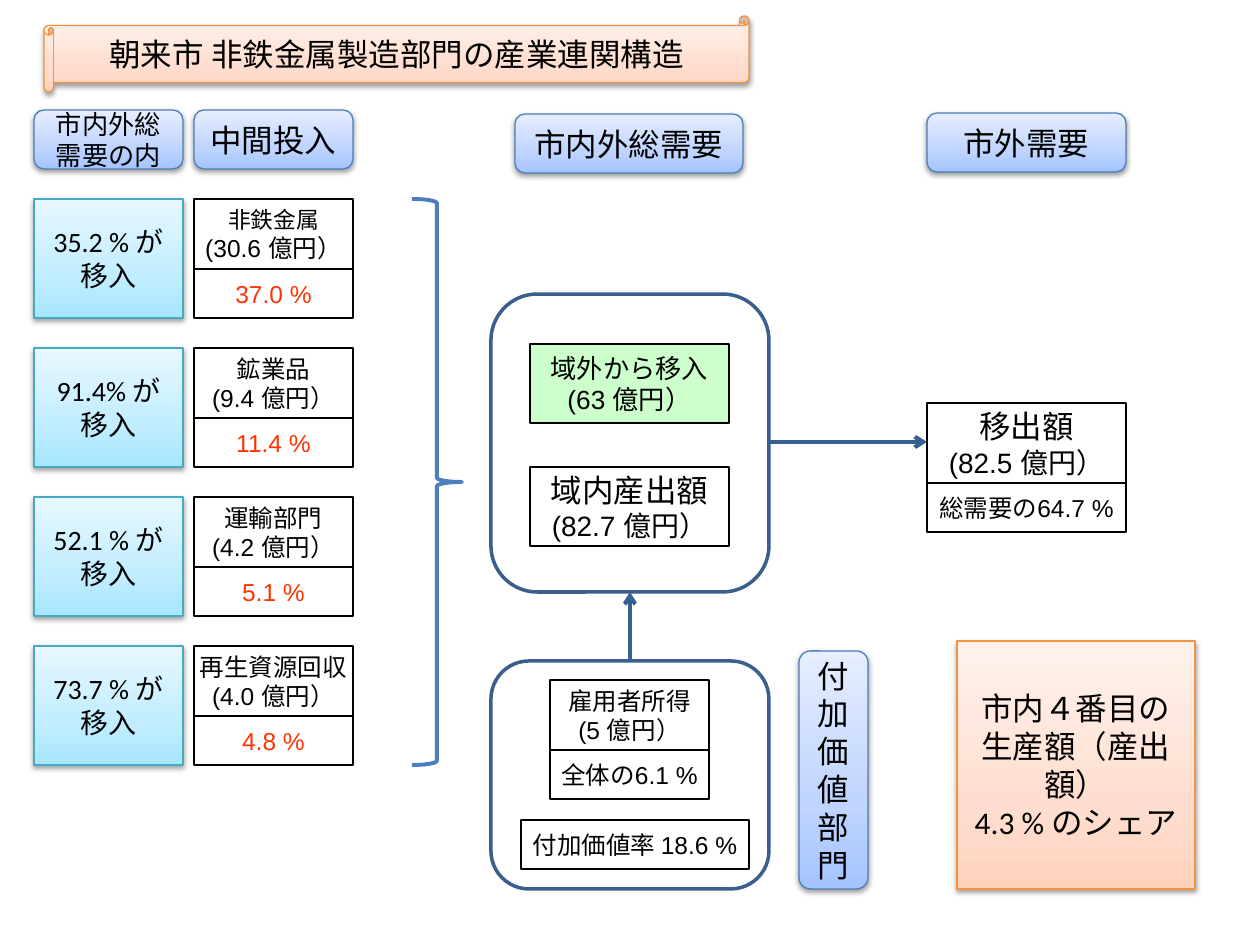
from copy import deepcopy

from lxml import etree
from pptx import Presentation
from pptx import util as u
from pptx.dml.color import RGBColor
from pptx.enum import shapes, text
from pptx.oxml import ns

PX = 914400 // 126  # EMU in one px
SHAPE = shapes.MSO_SHAPE

BLACK = RGBColor(0x00, 0x00, 0x00)
RED = RGBColor(0xFF, 0x33, 0x00)
GREEN = RGBColor(0xCC, 0xFF, 0xCC)
FRAME = RGBColor(0x3A, 0x5F, 0x8C)
ARROW = RGBColor(0x37, 0x60, 0x92)
BLUE_LINE = RGBColor(0x4B, 0x7E, 0xBC)
AQUA_LINE = RGBColor(0x46, 0xAA, 0xC5)
ORANGE_LINE = RGBColor(0xF6, 0x92, 0x40)

# Line colour, then gradient colours from bottom to top
BLUE = (BLUE_LINE, (RGBColor(0xA4, 0xC4, 0xFF), RGBColor(0xBF, 0xD4, 0xFF),
                    RGBColor(0xE6, 0xEE, 0xFF)))
AQUA = (AQUA_LINE, (RGBColor(0xA7, 0xE6, 0xFF), RGBColor(0xC1, 0xED, 0xFF),
                    RGBColor(0xE7, 0xF8, 0xFF)))
ORANGE = (ORANGE_LINE, (RGBColor(0xFF, 0xD2, 0xBD), RGBColor(0xFF, 0xDE, 0xD0),
                        RGBColor(0xFF, 0xF2, 0xED)))

TITLE = "朝来市 非鉄金属製造部門の産業連関構造"
ROW_TOP, ROW_PITCH = 199, 149
NAME_H, SHARE_H = 70, 49
INPUTS = [  # import lines, sector, sector size, amount, share
    (["35.2 % が", "移入"], "非鉄金属", 13, "(30.6 億円）", "37.0 %"),
    (["91.4% が移入"], "鉱業品", 14, "(9.4 億円）", "11.4 %"),
    (["52.1 % が", "移入"], "運輸部門", 14, "(4.2 億円）", "5.1 %"),
    (["73.7 % が", "移入"], "再生資源回収", 14, "(4.0 億円）", "4.8 %"),
]
HEADERS = [  # box, text, size
    ((34, 110, 149, 59), "市内外総需要の内", 15),
    ((194, 110, 159, 59), "中間投入", 18),
    ((515, 114, 228, 59), "市内外総需要", 18),
    ((927, 113, 199, 59), "市外需要", 18),
    ((799, 651, 69, 238), "付加価値部門", 18),
]


def px(*values):
    return [v * PX for v in values]


def write(s, lines, font, color=BLACK, wrap=True):
    """Fill a shape with centred lines, each a (text, size) pair."""
    tf = s.text_frame
    tf.word_wrap = wrap
    tf.auto_size = text.MSO_AUTO_SIZE.NONE
    tf.vertical_anchor = text.MSO_ANCHOR.MIDDLE
    for i, (words, size) in enumerate(lines):
        p = tf.add_paragraph() if i else tf.paragraphs[0]
        p.alignment = text.PP_ALIGN.CENTER
        r = p.add_run()
        r.text = words
        r.font.name, r.font.size = font, u.Pt(size)
        r.font.color.rgb = color


def add_outline(slide, kind, box, color, width):
    s = slide.shapes.add_shape(kind, *px(*box))
    s.shadow.inherit = False
    s.fill.background()
    s.line.color.rgb, s.line.width = color, u.Pt(width)
    return s


def add_cell(slide, box, lines, color=BLACK, fill=None):
    s = add_outline(slide, SHAPE.RECTANGLE, box, BLACK, 0.75)
    if fill is not None:
        s.fill.solid()
        s.fill.fore_color.rgb = fill
    write(s, lines, "Arial", color, wrap=False)


def add_shadow(s):
    effects = s._element.spPr.find(ns.qn("a:effectLst"))
    shadow = etree.SubElement(effects, ns.qn("a:outerShdw"), blurRad="40000",
                              dist="20000", dir="5400000", rotWithShape="0")
    color = etree.SubElement(shadow, ns.qn("a:srgbClr"), val=str(BLACK))
    etree.SubElement(color, ns.qn("a:alpha"), val="38000")


def add_panel(slide, kind, box, theme, lines=()):
    """Add a shadowed shape with a three-stop vertical gradient."""
    line, colors = theme
    s = add_outline(slide, kind, box, line, 0.75)
    s.fill.gradient()
    s.fill.gradient_angle = 90
    stop_list = s._element.spPr.find(".//" + ns.qn("a:gsLst"))
    stop_list.append(deepcopy(stop_list[0]))
    for stop, position, color in zip(s.fill.gradient_stops, (0, 0.35, 1), colors):
        stop.position, stop.color.rgb = position, color
    add_shadow(s)
    write(s, lines, "Calibri")


def add_arrow(slide, x1, y1, x2, y2):
    c = slide.shapes.add_connector(shapes.MSO_CONNECTOR.STRAIGHT, *px(x1, y1, x2, y2))
    c.line.color.rgb, c.line.width = ARROW, u.Pt(2.25)
    etree.SubElement(c.line._get_or_add_ln(), ns.qn("a:tailEnd"), type="arrow")
    etree.SubElement(c._element.spPr, ns.qn("a:effectLst"))


def add_title(slide):
    box = (44, 16, 705, 76)
    add_panel(slide, SHAPE.HORIZONTAL_SCROLL, box, ORANGE)
    title = slide.shapes.title
    title.left, title.top, title.width, title.height = px(*box)
    write(title, [(TITLE, 18)], "Calibri")
    slide.shapes._spTree.append(title._element)  # in front of the scroll


def add_inputs(slide):
    for i, (imported, sector, size, amount, share) in enumerate(INPUTS):
        y = ROW_TOP + i * ROW_PITCH
        add_panel(slide, SHAPE.RECTANGLE, (34, y, 149, NAME_H + SHARE_H), AQUA,
                  [(words, 16) for words in imported])
        add_cell(slide, (194, y, 159, NAME_H), [(sector, size), (amount, 14)])
        add_cell(slide, (194, y + NAME_H, 159, SHARE_H), [(share, 14)], RED)
    height = (len(INPUTS) - 1) * ROW_PITCH + NAME_H + SHARE_H
    add_outline(slide, SHAPE.RIGHT_BRACE, (412, ROW_TOP, 50, height), BLUE_LINE, 2.25)


def add_demand(slide):
    add_outline(slide, SHAPE.ROUNDED_RECTANGLE, (491, 294, 278, 298), FRAME, 2)
    add_cell(slide, (530, 344, 199, 79), [("域外から移入", 15), ("(63 億円）", 15)],
             fill=GREEN)
    add_cell(slide, (530, 467, 199, 79), [("域内産出額", 18), ("(82.7 億円）", 16)])
    add_arrow(slide, 769, 442, 927, 442)
    add_cell(slide, (927, 403, 199, 80), [("移出額", 18), ("(82.5 億円）", 16)])
    add_cell(slide, (927, 483, 199, 49), [("総需要の64.7 %", 14)])


def add_value_added(slide):
    add_outline(slide, SHAPE.ROUNDED_RECTANGLE, (491, 661, 278, 228), FRAME, 2)
    add_arrow(slide, 630, 661, 630, 592)
    add_cell(slide, (550, 680, 159, NAME_H), [("雇用者所得", 14), ("(5 億円）", 14)])
    add_cell(slide, (550, 680 + NAME_H, 159, SHARE_H), [("全体の6.1 %", 14)])
    add_cell(slide, (521, 820, 228, 49), [("付加価値率 18.6 %", 14)])


def main():
    prs = Presentation()
    prs.slide_width, prs.slide_height = u.Inches(10), u.Inches(7.5)
    slide = prs.slides.add_slide(prs.slide_layouts[5])
    add_title(slide)
    for box, words, size in HEADERS:
        add_panel(slide, SHAPE.ROUNDED_RECTANGLE, box, BLUE, [(words, size)])
    add_inputs(slide)
    add_demand(slide)
    add_value_added(slide)
    add_panel(slide, SHAPE.FLOWCHART_PROCESS, (957, 641, 238, 248), ORANGE,
              [("市内４番目の生産額（産出額）", 18), ("4.3 % のシェア", 18)])
    prs.save("out.pptx")


if __name__ == "__main__":
    main()
